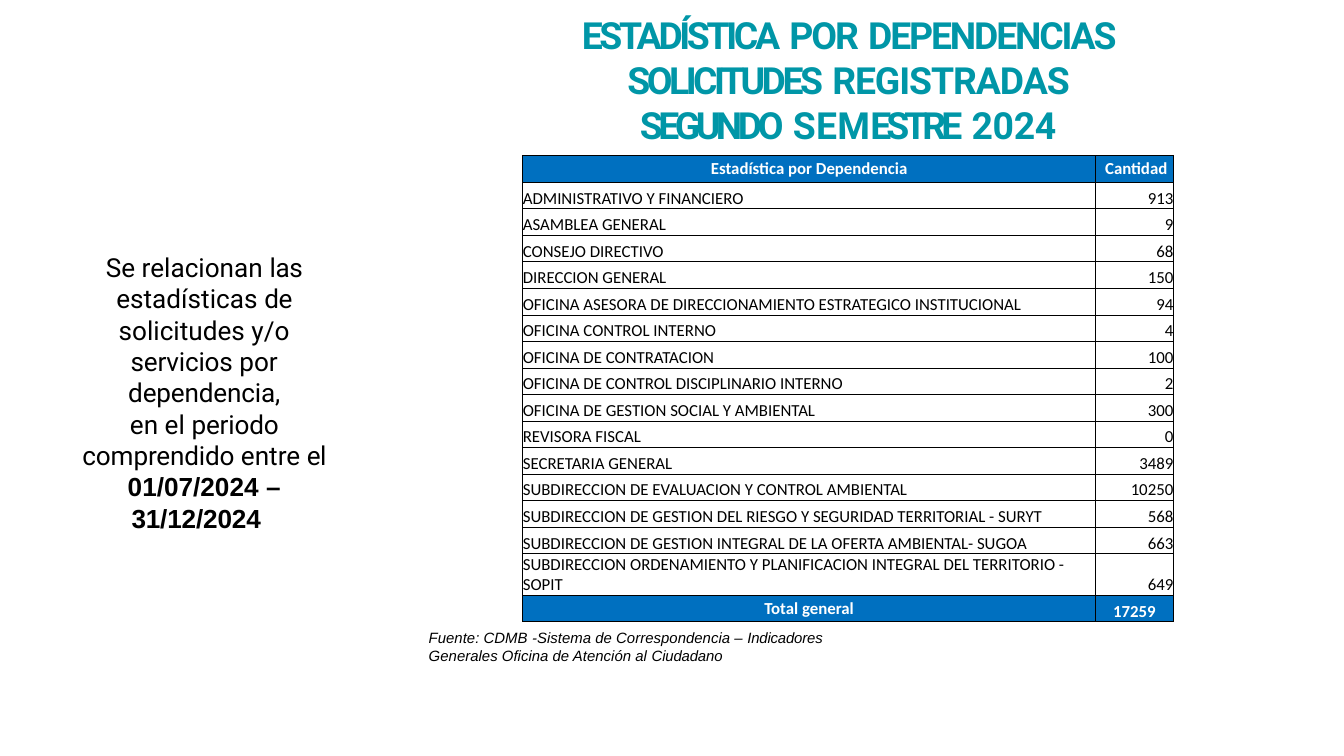
from lxml.etree import SubElement
from pptx import Presentation
from pptx.dml.color import RGBColor
from pptx.enum.text import MSO_ANCHOR, PP_ALIGN
from pptx.oxml.ns import qn
from pptx.util import Inches, Pt

COLORS = {"title": "0096A7", "header": "0070C0", "text": "000000",
          "light": "FFFFFF", "border": "000000"}

# Runs are (text, letter spacing in points)
TITLE = [("ESTADÍSTICA", -1.8), (" ", 0), ("POR", -1.2), (" ", 0),
         ("DEPENDENCIAS ", -1.2), ("SOLICITUDES", -1.9), (" ", 0),
         ("REGISTRADAS ", -0.6), ("SEGUNDO", -2.4), (" ", 0),
         ("SEM", 0.1), ("ESTRE", -2.7), (" ", 0), ("2024", -0.2)]
SOURCE = [("Fuente: CDMB ", 0), ("-", -0.1),
          ("Sistema de Correspondencia – ", 0), ("Indicadores ", -0.1),
          ("Generales Oficina de Atención al ", 0), ("Ciudadano", -0.1)]
INTRO = [("Se relacionan ", 0), ("las ", -0.2), ("estadísticas ", 0),
         ("de ", -0.2), ("solicitudes y/o ", 0), ("servicios ", -0.1),
         ("por ", 0), ("dependencia,", -0.1)]
PERIOD = [("en el ", 0), ("periodo comprendido ", -0.1), ("entre ", 0),
          ("el ", -0.3)]
START_DATE = [("01/07/2024 ", 0), ("–", -0.5)]
END_DATE = [("31/12/2024", -0.1)]

HEADER = ("Estadística por Dependencia", " Cantidad")
REQUESTS = [
    ("ADMINISTRATIVO Y FINANCIERO", 913),
    ("ASAMBLEA GENERAL", 9),
    ("CONSEJO DIRECTIVO", 68),
    ("DIRECCION GENERAL", 150),
    ("OFICINA ASESORA DE DIRECCIONAMIENTO ESTRATEGICO INSTITUCIONAL", 94),
    ("OFICINA CONTROL INTERNO", 4),
    ("OFICINA DE CONTRATACION", 100),
    ("OFICINA DE CONTROL DISCIPLINARIO INTERNO", 2),
    ("OFICINA DE GESTION SOCIAL Y AMBIENTAL", 300),
    ("REVISORA FISCAL", 0),
    ("SECRETARIA GENERAL", 3489),
    ("SUBDIRECCION DE EVALUACION Y CONTROL AMBIENTAL", 10250),
    ("SUBDIRECCION DE GESTION DEL RIESGO Y SEGURIDAD TERRITORIAL - SURYT", 568),
    ("SUBDIRECCION DE GESTION INTEGRAL DE LA OFERTA AMBIENTAL- SUGOA", 663),
    ("SUBDIRECCION ORDENAMIENTO Y PLANIFICACION INTEGRAL DEL TERRITORIO - SOPIT", 649),
]
TOTAL = ("Total general", sum(count for _, count in REQUESTS))


def rgb(name):
    return RGBColor.from_string(COLORS[name])


def style_font(font, name, size, color="text", bold=False, italic=False):
    font.name, font.size = name, Pt(size)
    font.bold, font.italic = bold, italic
    font.color.rgb = rgb(color)


def add_runs(p, runs, *style, **options):
    for text, spacing in runs:
        r = p.add_run()
        r.text = text
        style_font(r.font, *style, **options)
        r.font._element.set("spc", str(round(spacing * 100)))


def set_margins(p, left=0, right=0):
    pPr = p._p.get_or_add_pPr()
    pPr.set("marL", str(Inches(left)))
    pPr.set("marR", str(Inches(right)))
    pPr.set("indent", "0")


def prepare_frame(tf, top_inset=0.01):
    tf.word_wrap = True
    tf.vertical_anchor = MSO_ANCHOR.TOP
    tf.margin_left = tf.margin_right = tf.margin_bottom = 0
    tf.margin_top = Inches(top_inset)
    return tf


def add_text_box(s, left, top, width, height):
    box = s.shapes.add_textbox(Inches(left), Inches(top), Inches(width), Inches(height))
    return prepare_frame(box.text_frame)


def add_title(s):
    title = s.shapes.title
    title.left, title.top = Inches(4.1), Inches(0.07)
    title.width, title.height = Inches(4.42), Inches(1.03)
    p = prepare_frame(title.text_frame, 0.02).paragraphs[0]
    p.alignment, p.line_spacing = PP_ALIGN.CENTER, 1.0
    p.space_before = Pt(0)
    set_margins(p, 0.1, 0.1)
    add_runs(p, TITLE, "Roboto", 20, "title", bold=True)


def add_intro(s):
    tf = add_text_box(s, 0.48, 1.86, 2.06, 1.9)
    intro, period, end = tf.paragraphs[0], tf.add_paragraph(), tf.add_paragraph()
    for p, left in ((intro, 0.12), (period, 0.12), (end, 0)):
        p.alignment = PP_ALIGN.CENTER
        set_margins(p, left, 0.1)
    add_runs(intro, INTRO, "Roboto", 14)
    add_runs(period, PERIOD, "Roboto", 14)
    add_runs(period, START_DATE, "Arial", 14, bold=True)
    add_runs(end, END_DATE, "Arial", 14, bold=True)


def add_source(s):
    tf = add_text_box(s, 3.18, 4.67, 2.98, 0.3)
    set_margins(tf.paragraphs[0], 0.01)
    add_runs(tf.paragraphs[0], SOURCE, "Arial", 8, italic=True)


def add_borders(cell):
    tcPr = cell._tc.get_or_add_tcPr()
    for i, side in enumerate(("lnL", "lnR", "lnT", "lnB")):
        ln = tcPr.makeelement(qn(f"a:{side}"), {"w": str(Pt(0.5))})
        fill = SubElement(ln, qn("a:solidFill"))
        SubElement(fill, qn("a:srgbClr"), val=COLORS["border"])
        tcPr.insert(i, ln)


def fill_cell(cell, text, align, anchor, banner):
    cell.margin_left = cell.margin_right = cell.margin_top = cell.margin_bottom = 0
    cell.vertical_anchor = anchor
    if banner:
        cell.fill.solid()
        cell.fill.fore_color.rgb = rgb("header")
    else:
        cell.fill.background()
    add_borders(cell)
    cell.text_frame.text = str(text)
    p = cell.text_frame.paragraphs[0]
    p.alignment = align
    style_font(p.runs[0].font, "Calibri", 9, "light" if banner else "text", bold=banner)


def add_request_table(s):
    rows = [HEADER, *REQUESTS, TOTAL]
    last = len(rows) - 1
    table = s.shapes.add_table(len(rows), 2, Inches(3.89), Inches(1.16),
                               Inches(4.84), Inches(3.47)).table
    table.columns[0].width, table.columns[1].width = Inches(4.26), Inches(0.58)
    for i, row in enumerate(rows):
        # The last department takes two lines of text
        table.rows[i].height = Inches(0.31 if i == last - 1 else 3.16 / last)
        banner = i in (0, last)
        for j, text in enumerate(row):
            align = PP_ALIGN.CENTER if banner else (PP_ALIGN.LEFT, PP_ALIGN.RIGHT)[j]
            middle = i == 0 or (i == last and j == 0)
            anchor = MSO_ANCHOR.MIDDLE if middle else MSO_ANCHOR.BOTTOM
            fill_cell(table.cell(i, j), text, align, anchor, banner)


def main():
    prs = Presentation()
    # Widescreen, 16:9
    prs.slide_width = Inches(10)
    prs.slide_height = prs.slide_width * 9 // 16
    s = prs.slides.add_slide(prs.slide_layouts[5])
    add_title(s)
    add_source(s)
    add_intro(s)
    add_request_table(s)
    prs.save("out.pptx")


if __name__ == "__main__":
    main()
